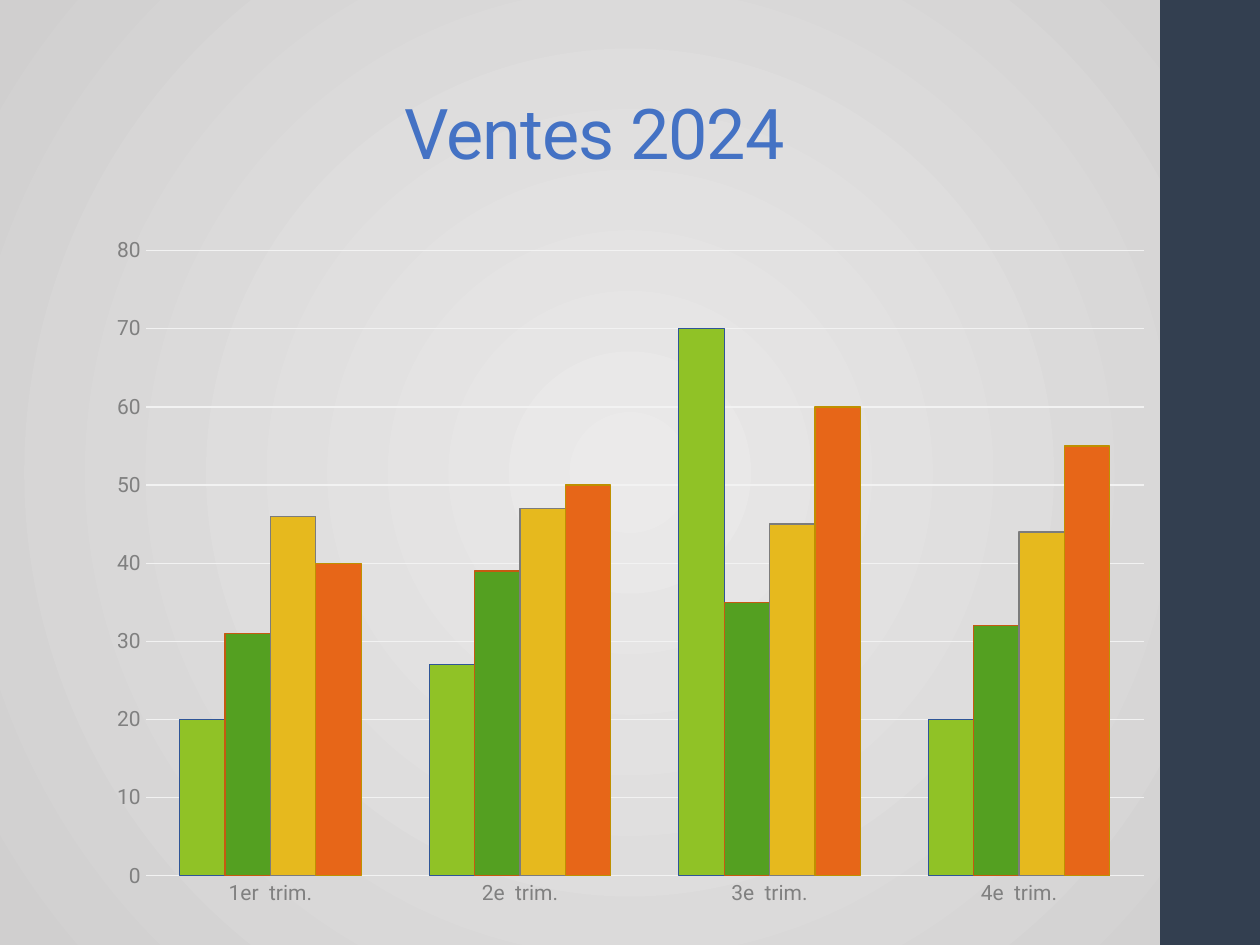
import pptx
import pptx.chart.data
import pptx.dml.color
import pptx.enum.chart
import pptx.enum.shapes
import pptx.enum.text
import pptx.oxml
import pptx.oxml.ns
import pptx.util

Cm = pptx.util.Cm
Pt = pptx.util.Pt
RGBColor = pptx.dml.color.RGBColor

FONT = "Roboto"
PALE = RGBColor(0xEB, 0xEA, 0xEA)
DIM = RGBColor(0xD0, 0xCF, 0xCF)
NAVY = RGBColor(0x33, 0x3F, 0x50)
BLUE = RGBColor(0x44, 0x72, 0xC4)
GREY = RGBColor(0x80, 0x80, 0x80)
GRID = RGBColor(0xF2, 0xF2, 0xF2)
BLACK = RGBColor(0x00, 0x00, 0x00)
LIME = RGBColor(0x90, 0xC2, 0x26)
GREEN = RGBColor(0x54, 0xA0, 0x21)
GOLD = RGBColor(0xE6, 0xB9, 0x1E)
ORANGE = RGBColor(0xE7, 0x66, 0x18)
INDIGO = RGBColor(0x2F, 0x55, 0x97)
RUST = RGBColor(0xC5, 0x5A, 0x11)
STONE = RGBColor(0x7C, 0x7C, 0x7C)
OCHRE = RGBColor(0xBF, 0x90, 0x00)

deck = pptx.Presentation()
deck.slide_width = Cm(25.4)
deck.slide_height = Cm(19.05)
slide = deck.slides.add_slide(deck.slide_layouts[6])

back = slide.background.fill
back.gradient()
for stop, place, shade in zip(back.gradient_stops, (0, 1), (PALE, DIM)):
    stop.position = place
    stop.color.rgb = shade
lin = slide.background._cSld.find(".//" + pptx.oxml.ns.qn("a:lin"))
ring = pptx.oxml.parse_xml(
    f'<a:path {pptx.oxml.ns.nsdecls("a")} path="circle">'
    '<a:fillToRect l="50000" t="50000" r="50000" b="50000"/></a:path>'
)
lin.getparent().replace(lin, ring)

band = slide.shapes.add_shape(
    pptx.enum.shapes.MSO_SHAPE.RECTANGLE, Cm(23.39), 0, Cm(2.01), Cm(19.05)
)
band.shadow.inherit = False
band.fill.solid()
band.fill.fore_color.rgb = NAVY
band.line.fill.background()

title = slide.shapes.add_textbox(Cm(7.9), Cm(0.91), Cm(9.17), Cm(2.74))
frame = title.text_frame
frame.word_wrap = True
frame.vertical_anchor = pptx.enum.text.MSO_ANCHOR.BOTTOM
para = frame.paragraphs[0]
para.line_spacing = 0.9
run = para.add_run()
run.text = "Ventes 2024"
run.font.size = Pt(40)
run.font.name = FONT
run.font.color.rgb = BLUE
run.font._element.set("spc", "-50")

data = pptx.chart.data.CategoryChartData()
data.categories = ["1er  trim.", "2e  trim.", "3e  trim.", "4e  trim."]
sales = [
    ((20, 27, 70, 20), LIME, INDIGO),
    ((31, 39, 35, 32), GREEN, RUST),
    ((46, 47, 45, 44), GOLD, STONE),
    ((40, 50, 60, 55), ORANGE, OCHRE),
]
for num, (vals, fill, edge) in enumerate(sales, 1):
    data.add_series(f"Series {num}", vals)

chart = slide.shapes.add_chart(
    pptx.enum.chart.XL_CHART_TYPE.COLUMN_CLUSTERED,
    Cm(1.93), Cm(4.52), Cm(21.56), Cm(14.02), data,
).chart
chart.has_legend = False
chart.has_title = False
chart.font.size = Pt(10)
chart.font.name = FONT
chart.font.color.rgb = BLACK

plot = chart.plots[0]
plot.gap_width = 150
plot.overlap = 0
plot.vary_by_categories = False
for bars, (vals, fill, edge) in zip(plot.series, sales):
    bars.format.fill.solid()
    bars.format.fill.fore_color.rgb = fill
    bars.format.line.color.rgb = edge
    bars.format.line.width = Pt(0.75)

for axis in (chart.category_axis, chart.value_axis):
    axis.major_tick_mark = pptx.enum.chart.XL_TICK_MARK.NONE
    axis.minor_tick_mark = pptx.enum.chart.XL_TICK_MARK.NONE
    axis.format.line.fill.background()
    axis.tick_labels.font.size = Pt(12)
    axis.tick_labels.font.name = FONT
    axis.tick_labels.font.color.rgb = GREY

scale = chart.value_axis
scale.minimum_scale = 0
scale.maximum_scale = 80
scale.major_unit = 10
scale.has_major_gridlines = True
scale.major_gridlines.format.line.color.rgb = GRID
scale.major_gridlines.format.line.width = Pt(0.75)

deck.save("out.pptx")
